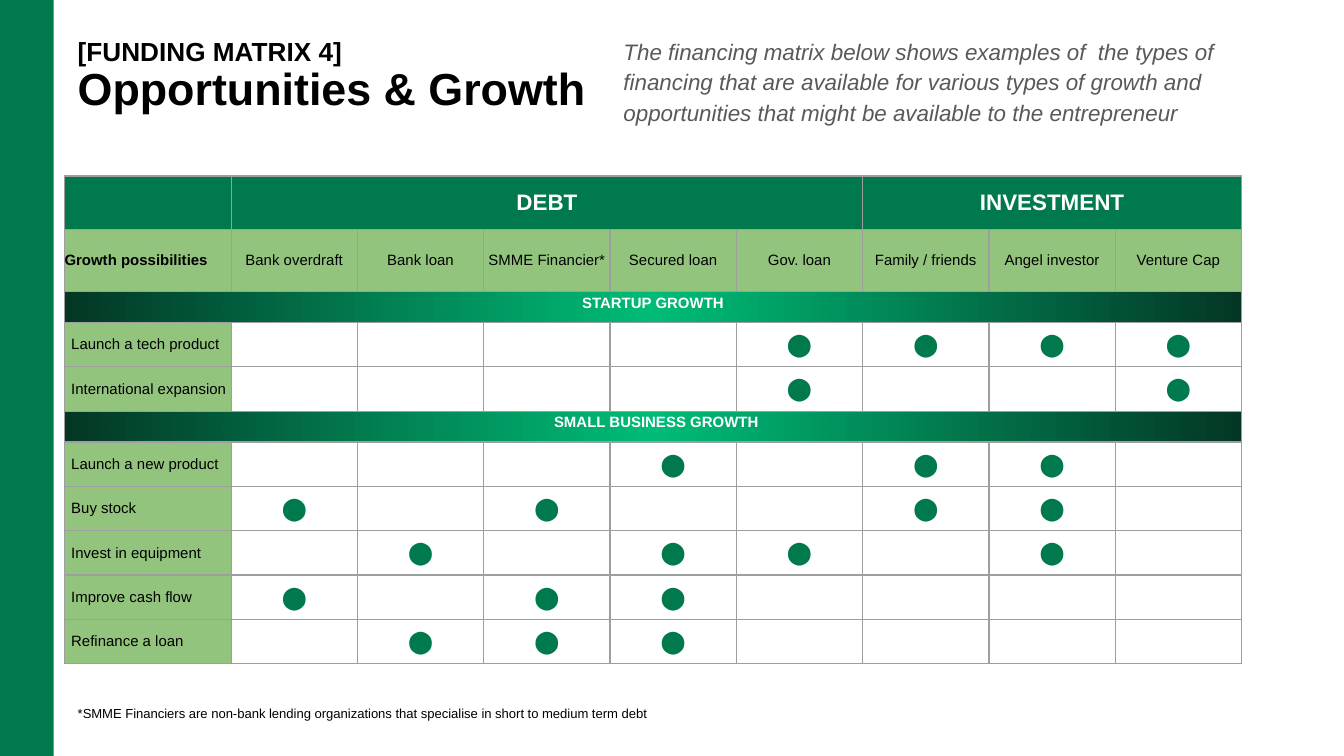
from lxml import etree
from pptx import Presentation
from pptx.dml.color import RGBColor
from pptx.enum import shapes, text
from pptx.oxml import parse_xml
from pptx.oxml.ns import nsdecls
from pptx.util import Inches, Pt

COLORS = {"green": "007A4D", "light": "93C47D", "grid": "9E9E9E", "grey": "595959",
          "black": "000000", "white": "FFFFFF", "glow": "00BC77", "deep": "033724"}
CENTER = text.PP_ALIGN.CENTER
DOT = "⬤"
SLIDE_W = 10
SLIDE_H = SLIDE_W * 9 / 16

GROUPS = [("DEBT", 1, 5), ("INVESTMENT", 6, 8)]
SOURCES = ["Bank overdraft", "Bank loan", "SMME Financier*", "Secured loan",
           "Gov. loan", "Family / friends", "Angel investor", "Venture Cap"]
# Section title, label inset, and the columns dotted for each growth possibility
SECTIONS = [
    ("STARTUP GROWTH", 0, [
        ("Launch a tech product", (5, 6, 7, 8)),
        ("International expansion", (5, 8)),
    ]),
    ("SMALL BUSINESS GROWTH", 0.05, [
        ("Launch a new product", (4, 6, 7)),
        ("Buy stock", (1, 3, 6, 7)),
        ("Invest in equipment", (2, 4, 5, 7)),
        ("Improve cash flow", (1, 3, 4)),
        ("Refinance a loan", (2, 3, 4)),
    ]),
]
HEADER_H, SOURCE_H, BAND_H, ROW_H = 0.4, 0.46, 0.23, 0.33


def rgb(name):
    return RGBColor.from_string(COLORS[name])


def write(p, content, size=8, color="black", bold=False, italic=False,
          align=None, spacing=None, after=None):
    r = p.add_run()
    r.text = content
    f = r.font
    f.name, f.size, f.bold, f.italic = "Arial", Pt(size), bold, italic
    f.color.rgb = rgb(color)
    if align is not None:
        p.alignment = align
    if spacing is not None:
        p.line_spacing = spacing
    if after is not None:
        p.space_after = Pt(after)


def text_box(s, x, y, w, h):
    tf = s.shapes.add_textbox(Inches(x), Inches(y), Inches(w), Inches(h)).text_frame
    tf.word_wrap = True
    tf.margin_left = tf.margin_right = tf.margin_top = tf.margin_bottom = Inches(0.1)
    return tf


def style_cell(cell):
    cell.margin_left = cell.margin_right = cell.margin_top = cell.margin_bottom = 0
    cell.vertical_anchor = text.MSO_ANCHOR.MIDDLE
    for side in ("lnL", "lnR", "lnT", "lnB"):
        cell._tc.get_or_add_tcPr().append(parse_xml(
            f'<a:{side} {nsdecls("a")} w="9525"><a:solidFill>'
            f'<a:srgbClr val="{COLORS["grid"]}"/></a:solidFill></a:{side}>'))
    cell.fill.background()


def fill_cell(cell, color):
    cell.fill.solid()
    cell.fill.fore_color.rgb = rgb(color)


def fill_radial(cell, inner, outer):
    tcPr = cell._tc.get_or_add_tcPr()
    for plain in tcPr.findall("{*}noFill"):
        tcPr.remove(plain)
    grad = parse_xml(
        f'<a:gradFill {nsdecls("a")}><a:gsLst>'
        f'<a:gs pos="0"><a:srgbClr val="{COLORS[inner]}"/></a:gs>'
        f'<a:gs pos="100000"><a:srgbClr val="{COLORS[outer]}"/></a:gs></a:gsLst></a:gradFill>')
    circle = etree.SubElement(grad, "{%s}path" % grad.nsmap["a"], path="circle")
    etree.SubElement(circle, "{%s}fillToRect" % grad.nsmap["a"],
                     l="50000", t="50000", r="50000", b="50000")
    tcPr.append(grad)


def side_bar(s, x, y, w, h):
    sp = s.shapes.add_shape(shapes.MSO_SHAPE.RECTANGLE,
                            Inches(x), Inches(y), Inches(w), Inches(h))
    sp.shadow.inherit = False
    sp.fill.solid()
    sp.fill.fore_color.rgb = rgb("green")
    sp.line.fill.background()


def intro(s, x, y, w, h):
    tf = text_box(s, x, y, w, h)
    write(tf.paragraphs[0],
          "The financing matrix below shows examples of  the types of financing that are "
          "available for various types of growth and opportunities that might be available "
          "to the entrepreneur",
          size=12, color="grey", italic=True, spacing=1.15, after=12)


def heading(s, x, y, w, h):
    tf = text_box(s, x, y, w, h)
    write(tf.paragraphs[0], "[FUNDING MATRIX 4]", size=14, bold=True, spacing=0.9)
    write(tf.add_paragraph(), "Opportunities & Growth", size=24, bold=True, spacing=0.9)


def footnote(s, x, y, w, h):
    write(text_box(s, x, y, w, h).paragraphs[0],
          "*SMME Financiers are non-bank lending organizations that specialise "
          "in short to medium term debt", size=7)


def matrix(s, x, y, label_w, source_w):
    heights = [HEADER_H, SOURCE_H]
    for _, _, rows in SECTIONS:
        heights += [BAND_H] + [ROW_H] * len(rows)
    widths = [label_w] + [source_w] * len(SOURCES)
    table = s.shapes.add_table(len(heights), len(widths), Inches(x), Inches(y),
                               Inches(sum(widths)), Inches(sum(heights))).table
    table.first_row = table.horz_banding = False
    for col, w in zip(table.columns, widths):
        col.width = Inches(w)
    for row, h in zip(table.rows, heights):
        row.height = Inches(h)
    for cell in table.iter_cells():
        style_cell(cell)

    def put(row, col, content, **fmt):
        write(table.cell(row, col).text_frame.paragraphs[0], content, **fmt)

    # Funding groups
    fill_cell(table.cell(0, 0), "green")
    for name, first, last in GROUPS:
        table.cell(0, first).merge(table.cell(0, last))
        fill_cell(table.cell(0, first), "green")
        put(0, first, name, size=12, color="white", bold=True, align=CENTER)

    # Funding sources
    put(1, 0, "Growth possibilities", bold=True)
    for col, name in enumerate(SOURCES, 1):
        put(1, col, name, align=CENTER)
    for col in range(len(widths)):
        fill_cell(table.cell(1, col), "light")

    # Section bands, each followed by its growth possibilities
    row = 2
    for title, inset, possibilities in SECTIONS:
        band = table.cell(row, 0)
        band.merge(table.cell(row, len(SOURCES)))
        band.margin_left = Inches(inset)
        fill_radial(band, "glow", "deep")
        put(row, 0, title, color="white", bold=True, align=CENTER, spacing=0.2)
        for row, (name, dotted) in enumerate(possibilities, row + 1):
            table.cell(row, 0).margin_left = Inches(0.05)
            fill_cell(table.cell(row, 0), "light")
            put(row, 0, name)
            for col in dotted:
                put(row, col, DOT, size=12, color="green", align=CENTER)
        row += 1


def main():
    prs = Presentation()
    prs.slide_width, prs.slide_height = Inches(SLIDE_W), Inches(SLIDE_H)
    s = prs.slides.add_slide(prs.slide_layouts[6])
    side_bar(s, 0, 0, 0.4, SLIDE_H)
    intro(s, 4.54, 0.15, 5.02, 0.52)
    footnote(s, 0.48, 5.19, 8.02, 0.32)
    matrix(s, 0.48, 1.31, 1.24, 0.94)
    heading(s, 0.48, 0.19, 6.98, 0.79)
    prs.save("out.pptx")


if __name__ == "__main__":
    main()
